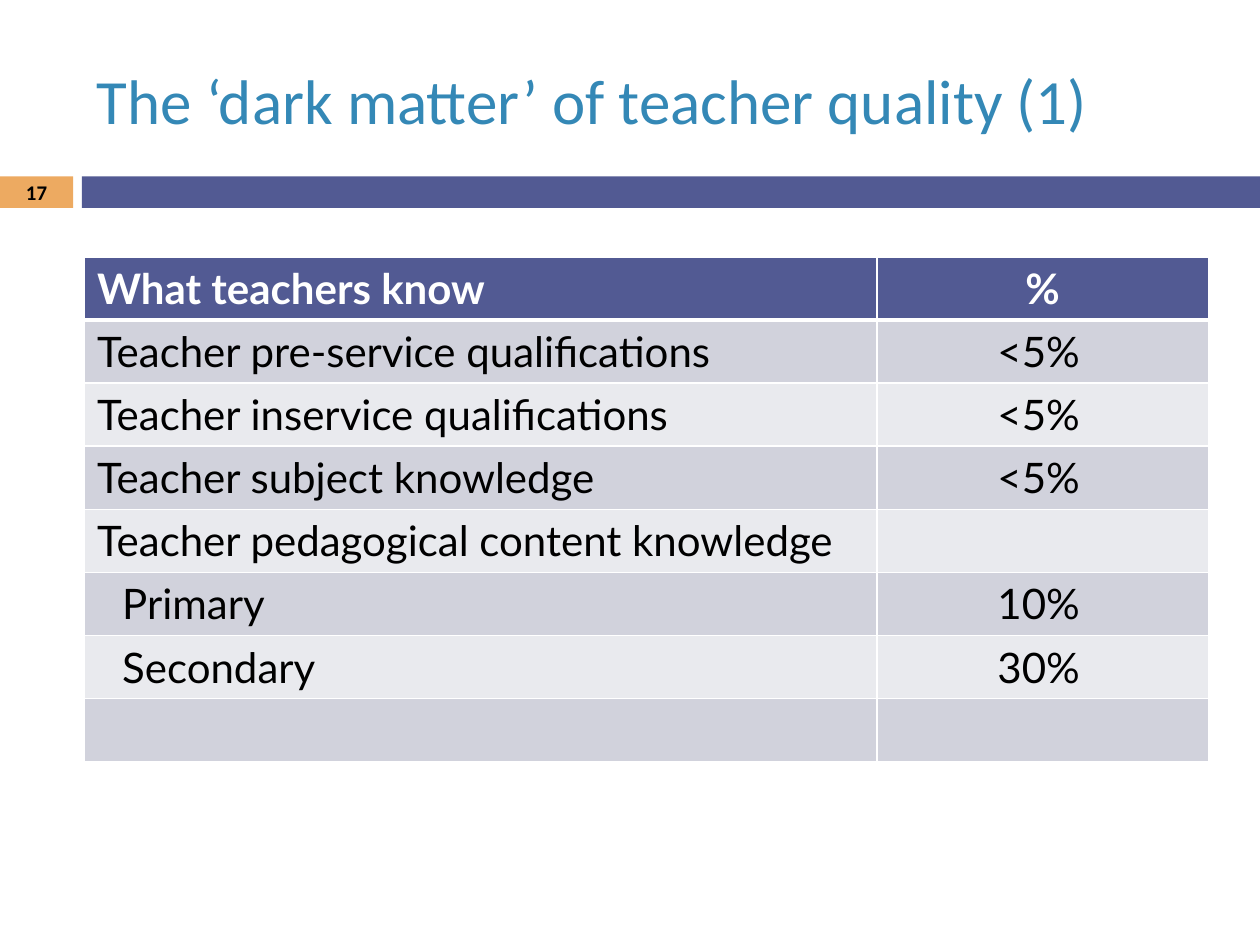
from dataclasses import dataclass

from lxml.etree import SubElement
from pptx import Presentation
from pptx.dml.color import RGBColor
from pptx.enum.shapes import MSO_SHAPE
from pptx.enum.text import MSO_ANCHOR, PP_ALIGN
from pptx.oxml.ns import qn
from pptx.util import Inches, Pt

WIDTH, HEIGHT = 10, 7.5
INDIGO, ORANGE, BLUE = "525A93", "EDAA61", "3488B6"
WHITE, BLACK = "FFFFFF", "000000"
BANDS = ("D1D2DC", "E9EAEE")

# Shared layout lines, in inches
CONTENT_LEFT, CONTENT_WIDTH = 0.67, 8.92
BAR_TOP, BAR_HEIGHT = 1.4, 0.25
NUMBER_WIDTH, BAR_LEFT = 0.58, 0.65
TABLE_TOP, ROW_HEIGHT = 2.04, 0.5
COLUMN_WIDTHS = (6.29, 2.63)
CELL_MARGIN, INDENT, VALUE_MARGIN = 0.1, 0.2, 1.02


@dataclass
class Box:
    left: float
    top: float
    width: float
    height: float

    def lengths(self) -> list:
        return [Inches(n) for n in (self.left, self.top, self.width, self.height)]


@dataclass
class Finding:
    label: str = ""
    value: str = ""
    level: int = 0


FINDINGS = [
    Finding("Teacher pre-service qualifications", "<5%"),
    Finding("Teacher inservice qualifications", "<5%"),
    Finding("Teacher subject knowledge", "<5%"),
    Finding("Teacher pedagogical content knowledge"),
    Finding("Primary", "10%", level=1),
    Finding("Secondary", "30%", level=1),
    Finding(),
]


def color(hex_value: str) -> RGBColor:
    return RGBColor.from_string(hex_value)


def write(frame, text: str, hex_value: str, align=PP_ALIGN.LEFT, **formats) -> None:
    paragraph = frame.paragraphs[0]
    paragraph.alignment = align
    if not text:
        return
    run = paragraph.add_run()
    run.text = text
    run.font.color.rgb = color(hex_value)
    for name, value in formats.items():
        setattr(run.font, name, value)


def add_bar(slide, box: Box, fill: str) -> None:
    shape = slide.shapes.add_shape(MSO_SHAPE.RECTANGLE, *box.lengths())
    shape.shadow.inherit = False
    shape.fill.solid()
    shape.fill.fore_color.rgb = color(fill)
    shape.line.fill.background()


def add_text(slide, box: Box, text: str, hex_value: str, **formats) -> None:
    frame = slide.shapes.add_textbox(*box.lengths()).text_frame
    frame.word_wrap = True
    frame.vertical_anchor = MSO_ANCHOR.MIDDLE
    write(frame, text, hex_value, name="Calibri", **formats)


def add_borders(cell, top: float, bottom: float) -> None:
    properties = cell._tc.get_or_add_tcPr()
    for side, width in {"L": 1, "R": 1, "T": top, "B": bottom}.items():
        line = SubElement(properties, qn(f"a:ln{side}"), w=str(Pt(width)))
        fill = SubElement(line, qn("a:solidFill"))
        SubElement(fill, qn("a:srgbClr"), val=WHITE)


def fill_cell(cell, text: str, row: int, **formats) -> None:
    header = row == 0
    add_borders(cell, top=3 if row == 1 else 1, bottom=3 if header else 1)
    cell.fill.solid()
    cell.fill.fore_color.rgb = color(INDIGO if header else BANDS[(row - 1) % 2])
    write(cell.text_frame, text, WHITE if header else BLACK,
          name="Lato", size=Pt(24), bold=header, **formats)


def add_findings(slide) -> None:
    rows = [Finding("What teachers know", "%"), *FINDINGS]
    box = Box(CONTENT_LEFT, TABLE_TOP, CONTENT_WIDTH, ROW_HEIGHT * len(rows))
    table = slide.shapes.add_table(len(rows), len(COLUMN_WIDTHS), *box.lengths()).table
    for column, width in zip(table.columns, COLUMN_WIDTHS):
        column.width = Inches(width)
    for row, finding in enumerate(rows):
        label, value = table.cell(row, 0), table.cell(row, 1)
        fill_cell(label, finding.label, row)
        label.margin_left = Inches(CELL_MARGIN + INDENT * finding.level)
        # Values line up on the right below a centred heading
        fill_cell(value, finding.value, row,
                  align=PP_ALIGN.RIGHT if row else PP_ALIGN.CENTER)
        if row:
            value.margin_right = Inches(VALUE_MARGIN)


def main() -> None:
    presentation = Presentation()
    presentation.slide_width, presentation.slide_height = Inches(WIDTH), Inches(HEIGHT)
    slide = presentation.slides.add_slide(presentation.slide_layouts[6])

    # Divider with the page number
    number_box = Box(0, BAR_TOP, NUMBER_WIDTH, BAR_HEIGHT)
    add_bar(slide, number_box, ORANGE)
    add_bar(slide, Box(BAR_LEFT, BAR_TOP, WIDTH - BAR_LEFT, BAR_HEIGHT), INDIGO)

    # Title and number
    add_text(slide, Box(CONTENT_LEFT, 0.25, CONTENT_WIDTH, 1.08),
             "The ‘dark matter’ of teacher quality (1)", BLUE, size=Pt(36))
    add_text(slide, number_box, "17", BLACK,
             align=PP_ALIGN.CENTER, size=Pt(11.9), bold=True)

    # Findings table
    add_findings(slide)
    presentation.save("out.pptx")


if __name__ == "__main__":
    main()
